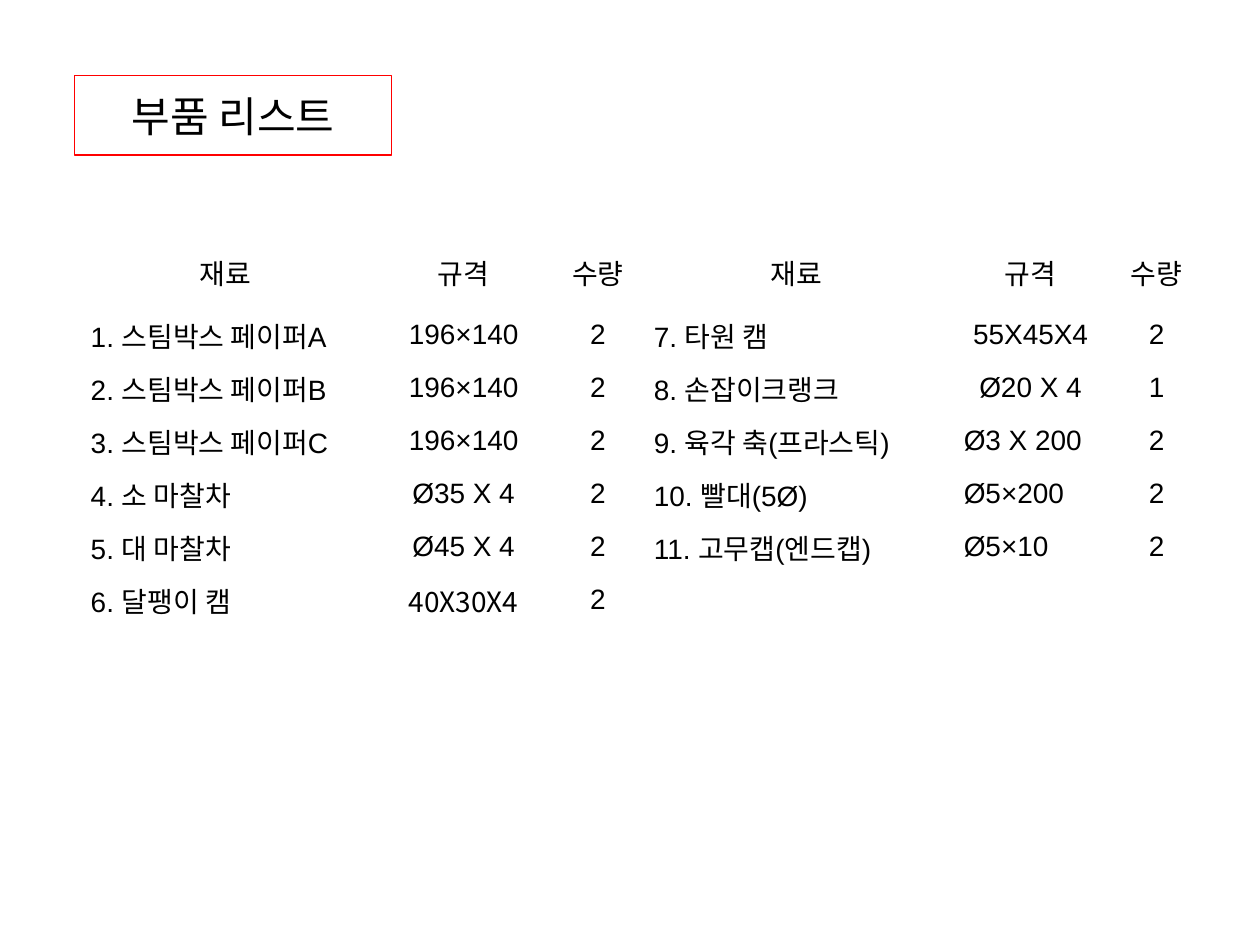
from dataclasses import dataclass, field
from itertools import zip_longest

from lxml.etree import SubElement
from pptx import Presentation
from pptx.dml.color import RGBColor
from pptx.enum.text import MSO_ANCHOR, PP_ALIGN
from pptx.oxml import parse_xml
from pptx.oxml.ns import nsdecls, qn
from pptx.slide import Slide
from pptx.util import Inches, Pt

COLORS = {"text": "000000", "frame": "FF0000"}
KOREAN = "Noto Sans CJK KR"
LATIN = "Arial"
HEADER = ["재료", "규격", "수량"]
LEFT_PARTS = [
    ("1. 스팀박스 페이퍼A", "196×140", "2"),
    ("2. 스팀박스 페이퍼B", "196×140", "2"),
    ("3. 스팀박스 페이퍼C", "196×140", "2"),
    ("4. 소 마찰차", "Ø35 X 4", "2"),
    ("5. 대 마찰차", "Ø45 X 4", "2"),
    ("6. 달팽이 캠", "40X30X4", "2"),
]
RIGHT_PARTS = [
    ("7. 타원 캠", "55X45X4", "2"),
    ("8. 손잡이크랭크", "Ø20 X 4", "1"),
    ("9. 육각 축(프라스틱)", "Ø3 X 200", "2"),
    ("10. 빨대(5Ø)", "Ø5×200", "2"),
    ("11. 고무캡(엔드캡)", "Ø5×10", "2"),
]
NAME_COLUMNS = (0, 3)
LEFT_ALIGNED_SPECS = {"Ø3 X 200", "Ø5×200", "Ø5×10"}


def write(frame, text, size=16, font=LATIN, align=PP_ALIGN.CENTER):
    para = frame.paragraphs[0]
    para.alignment = align
    span = para.add_run()
    span.text = text
    span.font.size = Pt(size)
    span.font.color.rgb = RGBColor.from_string(COLORS["text"])
    span.font.name = font
    SubElement(span.font._element, qn("a:ea"), typeface=KOREAN)


@dataclass
class PartsPage:
    page: Slide
    columns: list = field(default_factory=lambda: [2.34, 1.44, 0.69, 2.46, 1.26, 0.74])
    header_height: float = 0.58
    row_height: float = 0.42

    def title(self, text, left, top, width, height):
        box = self.page.shapes.title
        box.left, box.top = Inches(left), Inches(top)
        box.width, box.height = Inches(width), Inches(height)
        box.line.color.rgb = RGBColor.from_string(COLORS["frame"])
        box.line.width = Pt(0.75)
        box.text_frame.vertical_anchor = MSO_ANCHOR.MIDDLE
        write(box.text_frame, text, size=24, font=KOREAN)

    def table(self, rows, left, top):
        heights = [self.header_height] + [self.row_height] * (len(rows) - 1)
        table = self.page.shapes.add_table(
            len(rows), len(self.columns), Inches(left), Inches(top),
            Inches(sum(self.columns)), Inches(sum(heights)),
        ).table
        table.first_row = table.horz_banding = False
        for column, width in zip(table.columns, self.columns):
            column.width = Inches(width)
        for index, (row, height) in enumerate(zip(table.rows, heights)):
            row.height = Inches(height)
            for place, (cell, text) in enumerate(zip(row.cells, rows[index])):
                self.cell(cell, text, is_name=index > 0 and place in NAME_COLUMNS)

    def cell(self, cell, text, is_name):
        cell.fill.background()
        cell.vertical_anchor = MSO_ANCHOR.MIDDLE
        properties = cell._tc.get_or_add_tcPr()
        for position, side in enumerate(("lnL", "lnR", "lnT", "lnB")):
            border = f'<a:{side} {nsdecls("a")} w="0"><a:noFill/></a:{side}>'
            properties.insert(position, parse_xml(border))
        if text:
            to_left = is_name or text in LEFT_ALIGNED_SPECS
            write(
                cell.text_frame, text,
                font=KOREAN if text == "40X30X4" else LATIN,
                align=PP_ALIGN.LEFT if to_left else PP_ALIGN.CENTER,
            )


def main():
    deck = Presentation()
    deck.slide_width, deck.slide_height = Inches(10), Inches(7.5)
    parts = PartsPage(deck.slides.add_slide(deck.slide_layouts[5]))
    parts.title("부품 리스트", 0.59, 0.6, 2.52, 0.63)
    pairs = zip_longest(LEFT_PARTS, RIGHT_PARTS, fillvalue=("", "", ""))
    parts.table([HEADER * 2] + [first + second for first, second in pairs], 0.62, 1.87)
    deck.save("out.pptx")


if __name__ == "__main__":
    main()
